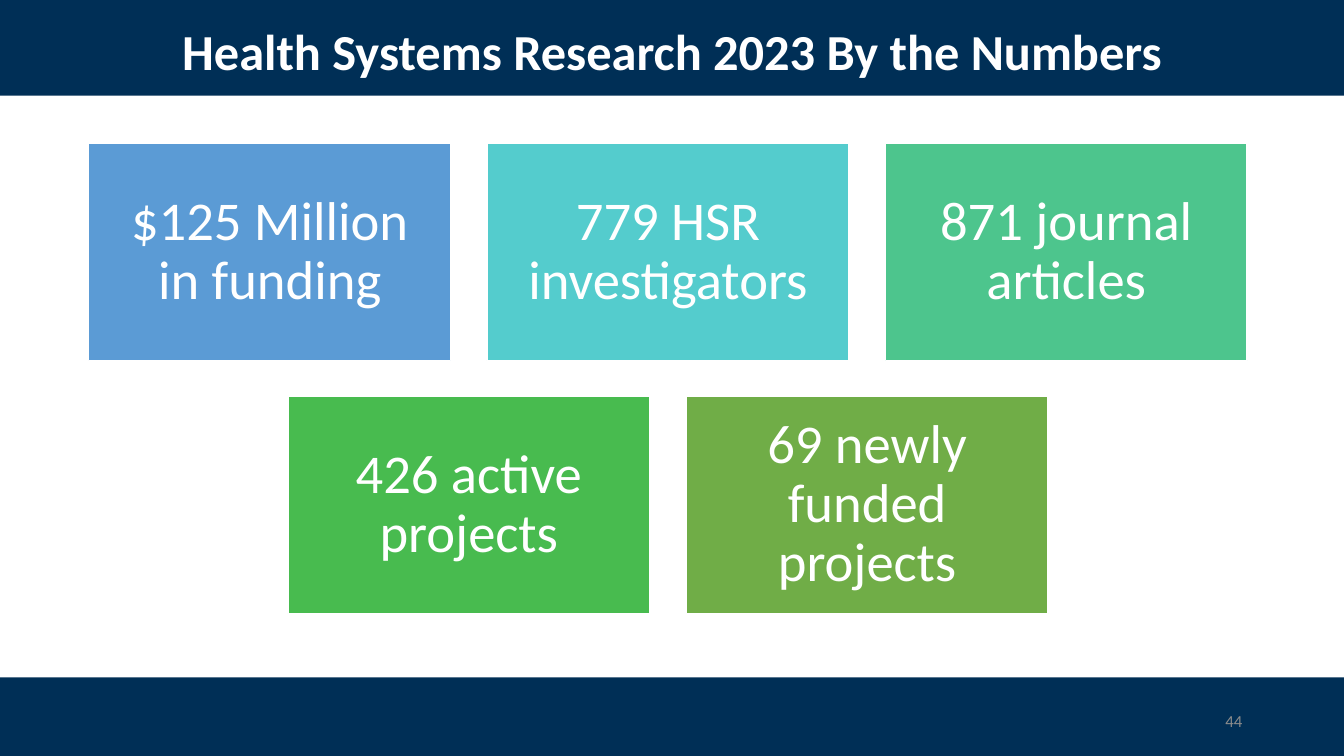
"""Build the Health Systems Research 2023 by-the-numbers slide."""
from pptx import Presentation
from pptx.dml.color import RGBColor
from pptx.enum.shapes import MSO_SHAPE as Shape
from pptx.enum.text import MSO_ANCHOR as Anchor, PP_ALIGN as Align
from pptx.util import Inches, Pt

NAVY = RGBColor(0x00, 0x2F, 0x56)
WHITE = RGBColor(0xFF, 0xFF, 0xFF)
GRAY = RGBColor(0x8C, 0x8C, 0x8C)
BLUE = RGBColor(0x5B, 0x9B, 0xD5)
TURQUOISE = RGBColor(0x54, 0xCC, 0xCD)
MINT = RGBColor(0x4D, 0xC5, 0x8D)
GREEN = RGBColor(0x48, 0xBB, 0x4F)
OLIVE = RGBColor(0x70, 0xAD, 0x47)

CARD_WIDTH, CARD_HEIGHT = 3.59, 2.16
CARD_STEP, ROW_STEP = 3.95, 2.51
CARD_TOP, PAGE_CENTER = 1.42, 6.625
ROWS = [
    [("$125 Million in funding", BLUE),
     ("779 HSR investigators", TURQUOISE),
     ("871 journal articles", MINT)],
    [("426 active projects", GREEN),
     ("69 newly funded projects", OLIVE)],
]


def add_block(left, top, width, height, color):
    block = page.shapes.add_shape(
        Shape.RECTANGLE, Inches(left), Inches(top), Inches(width), Inches(height))
    block.shadow.inherit = False
    block.fill.solid()
    block.fill.fore_color.rgb = color
    block.line.fill.background()
    return block


def set_text(frame, text, size, color, align, anchor):
    frame.word_wrap = True
    frame.vertical_anchor = anchor
    para = frame.paragraphs[0]
    para.text = text
    para.alignment = align
    para.font.name = "Calibri"
    para.font.size = Pt(size)
    para.font.color.rgb = color
    return para


deck = Presentation()
deck.slide_width, deck.slide_height = Inches(13.33), Inches(7.5)
page = deck.slides.add_slide(deck.slide_layouts[5])

for top, height in [(0, 0.95), (6.72, 0.78)]:
    add_block(0, top, 13.33, height, NAVY)

title = page.shapes.title
title.left, title.top = Inches(0.53), Inches(0.15)
title.width, title.height = Inches(12.28), Inches(0.71)
heading = set_text(title.text_frame, "Health Systems Research 2023 By the Numbers",
                   36, WHITE, Align.CENTER, Anchor.TOP)
heading.font.bold = True
title.element.getparent().append(title.element)

for row, cards in enumerate(ROWS):
    row_width = CARD_STEP * (len(cards) - 1) + CARD_WIDTH
    for column, (label, color) in enumerate(cards):
        left = PAGE_CENTER - row_width / 2 + column * CARD_STEP
        card = add_block(left, CARD_TOP + row * ROW_STEP, CARD_WIDTH, CARD_HEIGHT, color)
        card.line.color.rgb = WHITE
        card.line.width = Pt(1)
        frame = card.text_frame
        frame.margin_left = frame.margin_right = Inches(0.16)
        frame.margin_top = frame.margin_bottom = Inches(0.16)
        para = set_text(frame, label, 39, WHITE, Align.CENTER, Anchor.MIDDLE)
        para.line_spacing = 0.9

number = page.shapes.add_textbox(Inches(9.42), Inches(6.95), Inches(3), Inches(0.4))
set_text(number.text_frame, "44", 12, GRAY, Align.RIGHT, Anchor.MIDDLE)

deck.save("out.pptx")
